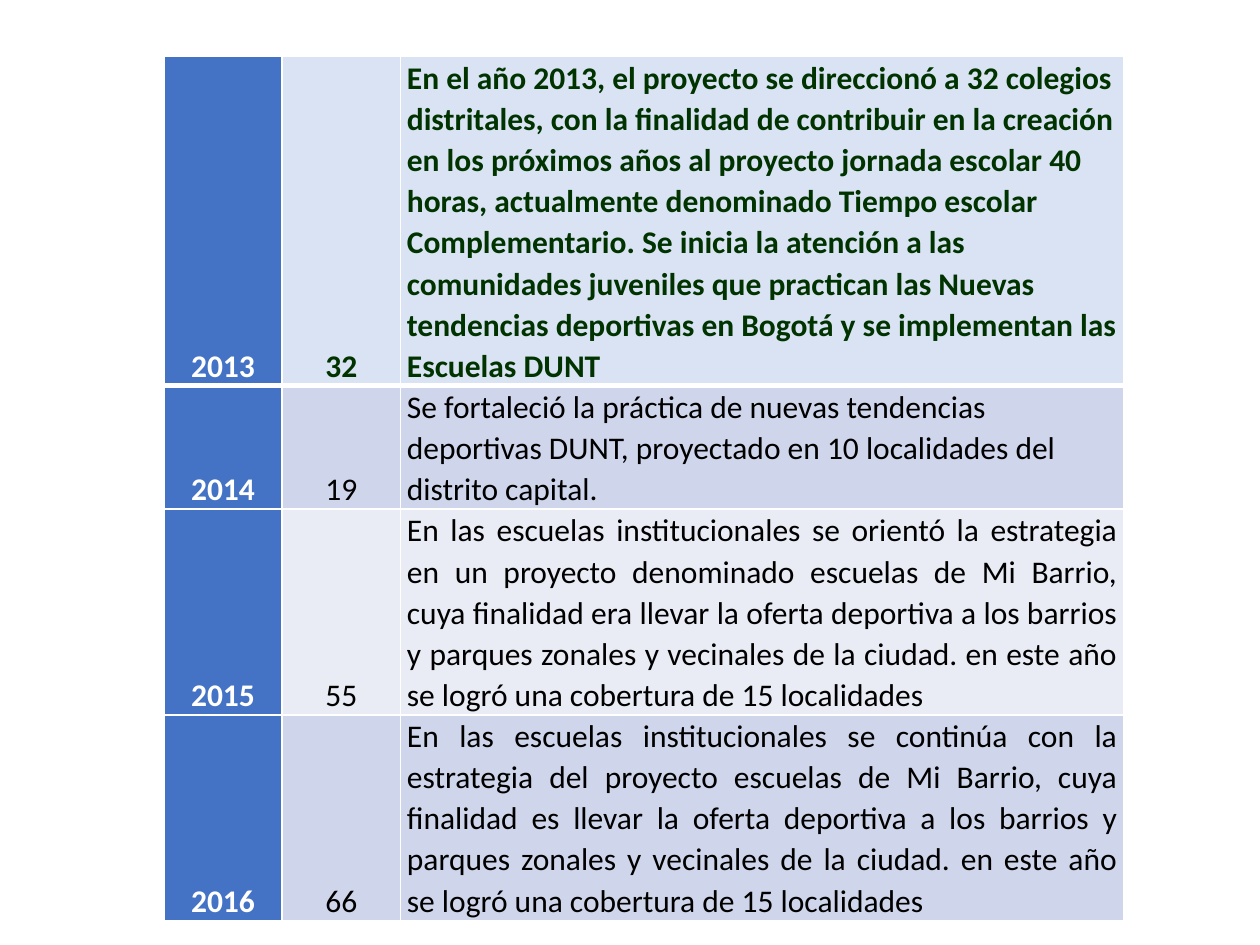
from dataclasses import dataclass

from lxml.etree import SubElement
from pptx import Presentation
from pptx.dml.color import RGBColor
from pptx.enum.text import MSO_ANCHOR, PP_ALIGN
from pptx.oxml.ns import qn
from pptx.table import _Cell
from pptx.util import Inches, Pt

COLORS = {
    "white": "FFFFFF",
    "black": "000000",
    "green": "003300",
    "blue": "4472C4",
    "sky": "DAE3F3",
    "mid": "CFD5EA",
    "pale": "E9EBF5",
}
WIDTHS = (0.94, 0.94, 5.74)


@dataclass
class Year:
    year: str
    count: str
    note: str
    height: float
    fill: str
    ink: str = "black"
    bold: bool = False
    align: PP_ALIGN = PP_ALIGN.JUSTIFY
    anchor: MSO_ANCHOR = MSO_ANCHOR.BOTTOM


YEARS = [
    Year(
        "2013", "32",
        "En el año 2013, el proyecto se direccionó a 32 colegios distritales, "
        "con la finalidad de contribuir en la creación en los próximos años al "
        "proyecto jornada escolar 40 horas, actualmente denominado Tiempo "
        "escolar Complementario. Se inicia la atención a las comunidades "
        "juveniles que practican las Nuevas tendencias deportivas en Bogotá y "
        "se implementan las Escuelas DUNT",
        2.56, "sky", ink="green", bold=True, align=PP_ALIGN.LEFT,
    ),
    Year(
        "2014", "19",
        "Se fortaleció la práctica de nuevas tendencias deportivas DUNT, "
        "proyectado en 10 localidades del distrito capital.",
        0.96, "mid", align=PP_ALIGN.LEFT,
    ),
    Year(
        "2015", "55",
        "En las escuelas institucionales se orientó la estrategia en un "
        "proyecto denominado escuelas de Mi Barrio, cuya finalidad era llevar "
        "la oferta deportiva a los barrios y parques zonales y vecinales de la "
        "ciudad. en este año se logró una cobertura de 15 localidades",
        1.61, "pale",
    ),
    Year(
        "2016", "66",
        "En las escuelas institucionales se continúa con la estrategia del "
        "proyecto escuelas de Mi Barrio, cuya finalidad es llevar la oferta "
        "deportiva a los barrios y parques zonales y vecinales de la ciudad. "
        "en este año se logró una cobertura de 15 localidades",
        1.61, "mid", anchor=MSO_ANCHOR.MIDDLE,
    ),
]


def rgb(name: str) -> RGBColor:
    return RGBColor.from_string(COLORS[name])


def edge(cell: _Cell, top: float, base: float) -> None:
    props = cell._tc.get_or_add_tcPr()
    for side, width in (("L", 1), ("R", 1), ("T", top), ("B", base)):
        line = SubElement(props, qn(f"a:ln{side}"), w=str(Pt(width)))
        fill = SubElement(line, qn("a:solidFill"))
        SubElement(fill, qn("a:srgbClr"), val=COLORS["white"])


def write(cell: _Cell, text: str, fill: str, ink: str, bold: bool,
          align: PP_ALIGN, anchor: MSO_ANCHOR) -> None:
    cell.fill.solid()
    cell.fill.fore_color.rgb = rgb(fill)
    cell.margin_left = cell.margin_right = Inches(0.05)
    cell.margin_top = cell.margin_bottom = 0
    cell.vertical_anchor = anchor
    para = cell.text_frame.paragraphs[0]
    para.alignment = align
    para.line_spacing = 1.07
    run = para.add_run()
    run.text = text
    run.font.name = "Calibri"
    run.font.size = Pt(18)
    run.font.bold = bold
    run.font.color.rgb = rgb(ink)


def main() -> None:
    deck = Presentation()
    deck.slide_width, deck.slide_height = Inches(10), Inches(7.5)
    slide = deck.slides.add_slide(deck.slide_layouts[6])
    frame = slide.shapes.add_table(
        len(YEARS), len(WIDTHS), Inches(1.3), Inches(0.45),
        Inches(sum(WIDTHS)), Inches(sum(item.height for item in YEARS)),
    )
    table = frame.table
    for column, width in zip(table.columns, WIDTHS):
        column.width = Inches(width)
    for index, item in enumerate(YEARS):
        row = table.rows[index]
        row.height = Inches(item.height)
        for cell in row.cells:
            edge(cell, 3 if index == 1 else 1, 3 if index == 0 else 1)
        year, count, note = row.cells
        write(year, item.year, "blue", "white", True,
              PP_ALIGN.CENTER, MSO_ANCHOR.BOTTOM)
        write(count, item.count, item.fill, item.ink, item.bold,
              PP_ALIGN.CENTER, MSO_ANCHOR.BOTTOM)
        write(note, item.note, item.fill, item.ink, item.bold,
              item.align, item.anchor)
    deck.save("out.pptx")


if __name__ == "__main__":
    main()
